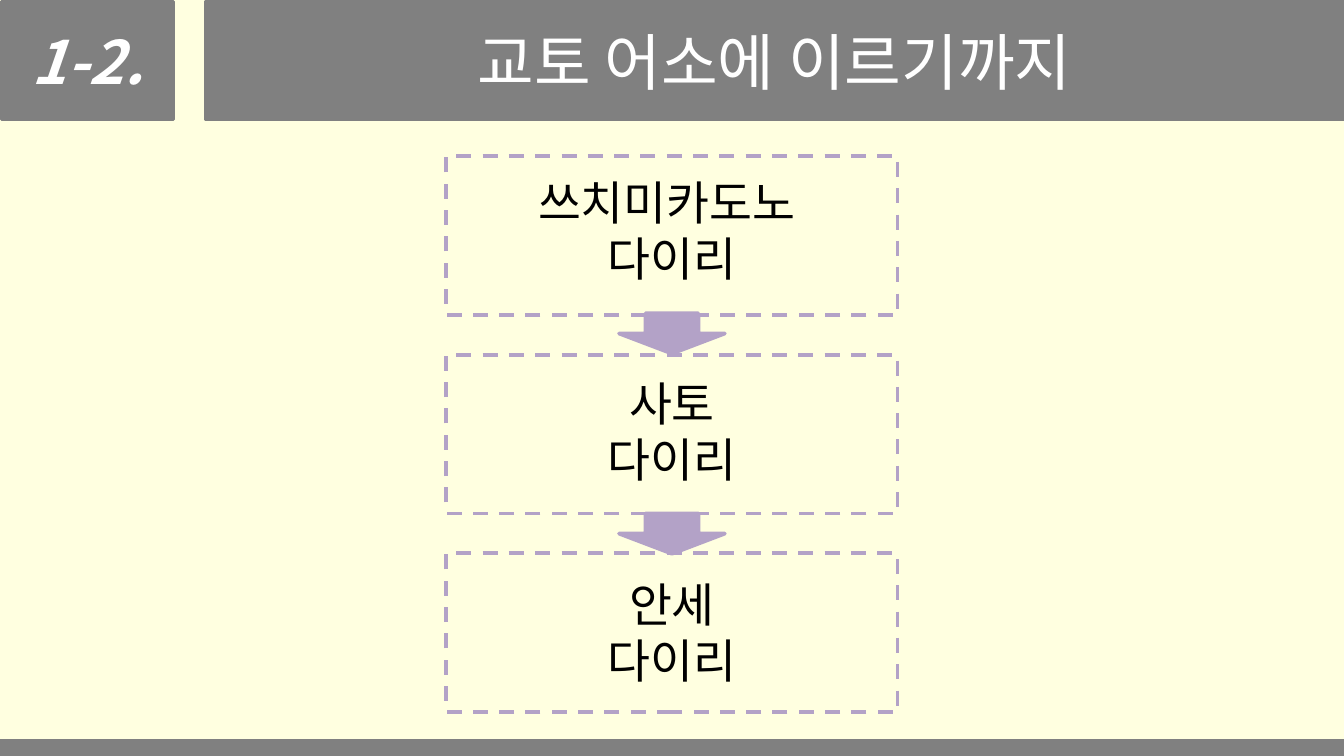
"""Build the slide on the three stages leading to the Kyoto palace."""
from lxml import etree
from pptx import Presentation
from pptx import util as u
from pptx.dml.color import RGBColor
from pptx.enum import dml, shapes, text
from pptx.oxml.ns import qn

COLORS = {"background": "FFFFE0", "band": "808080", "accent": "B3A2C7",
          "title": "FFFFFF", "body": "000000"}
FONT = "Noto Sans CJK KR"
WIDTH, HEIGHT = 25.4, 14.28
NUMBER, TITLE = "1-2.", "교토 어소에 이르기까지"
STAGES = [("쓰치미카도노 ", "다이리"), ("사토", "다이리"), ("안세", "다이리")]
LABEL_WIDTHS = [6.15, 3.17, 3.17]

BOX_WIDTH, BOX_HEIGHT, BOX_TOP, BOX_PITCH = 8.53, 3.0, 2.95, 3.75
LABEL_HEIGHT, LABEL_TOP, LABEL_PITCH = 2.39, 3.15, 3.8
ARROW_WIDTH, ARROW_HEIGHT, ARROW_TOP, ARROW_PITCH = 2.0, 0.76, 5.92, 3.78


def color(name):
    return RGBColor.from_string(COLORS[name])


def add_figure(slide, kind, box, line, fill=None):
    shape = slide.shapes.add_shape(kind, *map(u.Cm, box))
    shape.shadow.inherit = False
    if fill:
        shape.fill.solid()
        shape.fill.fore_color.rgb = color(fill)
    else:
        shape.fill.background()
    shape.line.color.rgb = color(line)
    shape.line.width = u.Pt(2)
    return shape


def write(frame, lines, size, ink, strong=False):
    for index, words in enumerate(lines):
        paragraph = frame.add_paragraph() if index else frame.paragraphs[0]
        paragraph.alignment = text.PP_ALIGN.CENTER
        run = paragraph.add_run()
        run.text = words
        font = run.font
        font.name, font.size = FONT, u.Pt(size)
        font.bold = font.italic = strong
        font.color.rgb = color(ink)
        properties = run._r.get_or_add_rPr()
        etree.SubElement(properties, qn("a:ea")).set("typeface", FONT)


def centered(width, height, top):
    return (WIDTH - width) / 2, top, width, height


def main():
    presentation = Presentation()
    presentation.slide_width = u.Cm(WIDTH)
    presentation.slide_height = u.Cm(HEIGHT)
    slide = presentation.slides.add_slide(presentation.slide_layouts[6])
    slide.background.fill.solid()
    slide.background.fill.fore_color.rgb = color("background")

    rectangle = shapes.MSO_SHAPE.RECTANGLE
    headings = [(TITLE, (3.9, 0.03, 21.48, 2.23), 33, False),
                (NUMBER, (0.03, 0.03, 3.25, 2.23), 32, True)]
    for words, box, size, strong in headings:
        band = add_figure(slide, rectangle, box, "band", "band")
        band.text_frame.word_wrap = True
        band.text_frame.vertical_anchor = text.MSO_ANCHOR.MIDDLE
        write(band.text_frame, [words], size, "title", strong)
    add_figure(slide, rectangle, (0, 14, WIDTH, 0.28), "band", "band")

    for index, (lines, width) in enumerate(zip(STAGES, LABEL_WIDTHS)):
        box = centered(BOX_WIDTH, BOX_HEIGHT, BOX_TOP + index * BOX_PITCH)
        frame = add_figure(slide, rectangle, box, "accent")
        frame.line.dash_style = dml.MSO_LINE.DASH
        place = centered(width, LABEL_HEIGHT, LABEL_TOP + index * LABEL_PITCH)
        label = slide.shapes.add_textbox(*map(u.Cm, place))
        label.text_frame.word_wrap = False
        label.text_frame.auto_size = text.MSO_AUTO_SIZE.SHAPE_TO_FIT_TEXT
        write(label.text_frame, lines, 25, "body")

    for index in range(len(STAGES) - 1):
        box = centered(ARROW_WIDTH, ARROW_HEIGHT, ARROW_TOP + index * ARROW_PITCH)
        add_figure(slide, shapes.MSO_SHAPE.DOWN_ARROW, box, "accent", "accent")

    presentation.save("out.pptx")


if __name__ == "__main__":
    main()
